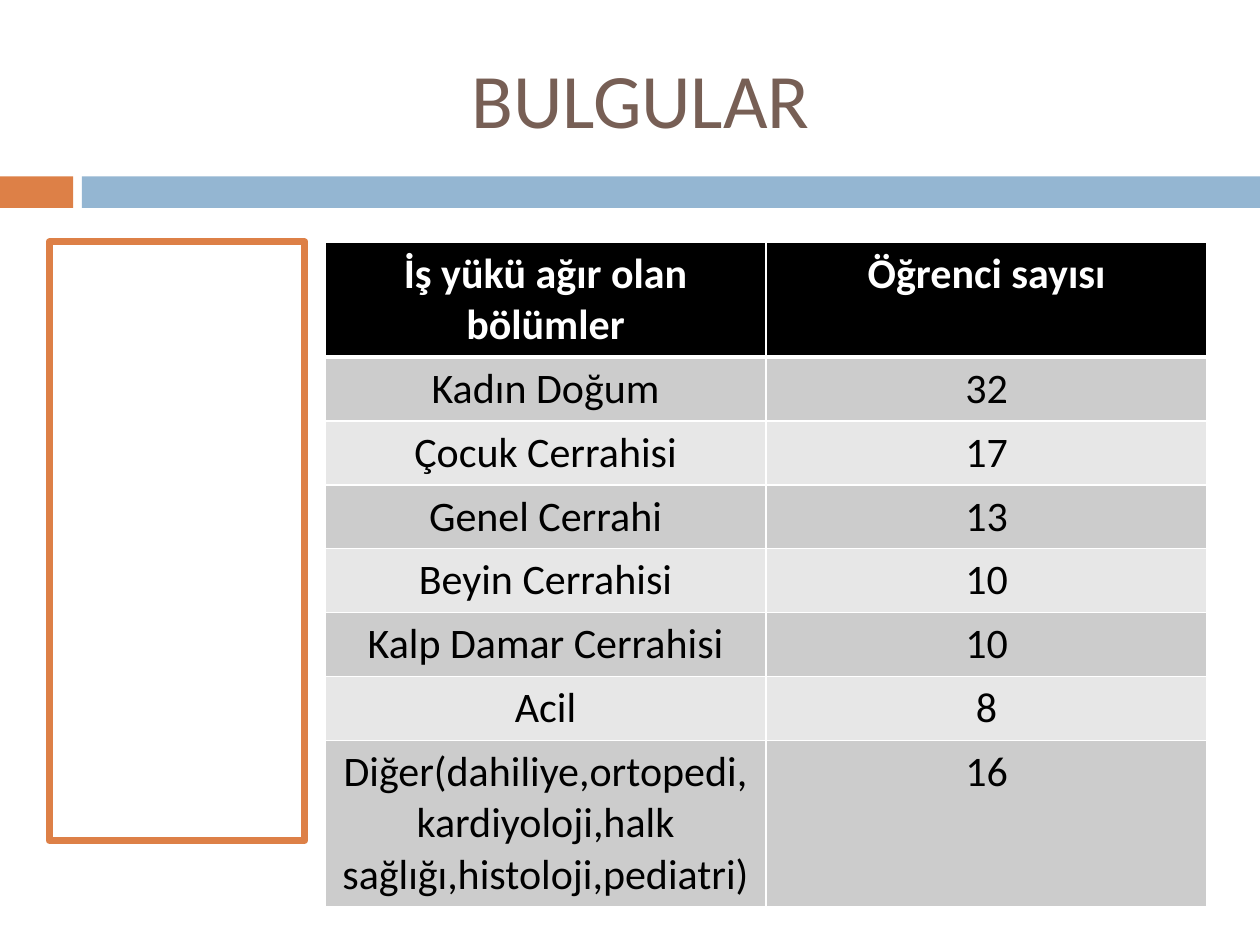
"""Build the findings slide with a table of the departments with a heavy workload."""
from lxml.etree import SubElement
from pptx import Presentation
from pptx.dml.color import RGBColor
from pptx.enum.shapes import MSO_SHAPE as Shape
from pptx.enum.text import MSO_ANCHOR as Anchor, PP_ALIGN as Align
from pptx.oxml.ns import qn
from pptx.util import Inches, Pt

COLORS = {
    "orange": "DD8047", "blue": "94B6D2", "brown": "775F55", "white": "FFFFFF",
    "black": "000000", "dark_band": "CCCCCC", "light_band": "E7E7E7",
}
ROWS = [
    ("İş yükü ağır olan bölümler", "Öğrenci sayısı"),
    ("Kadın Doğum", "32"),
    ("Çocuk Cerrahisi", "17"),
    ("Genel Cerrahi", "13"),
    ("Beyin Cerrahisi", "10"),
    ("Kalp Damar Cerrahisi", "10"),
    ("Acil", "8"),
    ("Diğer(dahiliye,ortopedi,kardiyoloji,halk sağlığı,histoloji,pediatri)", "16"),
]


def write(frame, text, color, **font_values):
    para = frame.paragraphs[0]
    para.alignment = Align.CENTER
    span = para.add_run()
    span.text = text
    span.font.color.rgb = RGBColor.from_string(COLORS[color])
    for name, value in {"name": "Calibri", **font_values}.items():
        setattr(span.font, name, value)


def add_border(cell, side, width):
    line = SubElement(cell._tc.get_or_add_tcPr(), qn(f"a:ln{side}"), w=str(Pt(width)))
    fill = SubElement(line, qn("a:solidFill"))
    SubElement(fill, qn("a:srgbClr"), val=COLORS["white"])


deck = Presentation()
deck.slide_width, deck.slide_height = Inches(10), Inches(7.5)
page = deck.slides.add_slide(deck.slide_layouts[5])

for left, width, color in [(0, 0.58, "orange"), (0.65, 9.35, "blue")]:
    bar = page.shapes.add_shape(
        Shape.RECTANGLE, Inches(left), Inches(1.4), Inches(width), Inches(0.25))
    bar.shadow.inherit = False
    bar.fill.solid()
    bar.fill.fore_color.rgb = RGBColor.from_string(COLORS[color])
    bar.line.fill.background()

title = page.shapes.title
title.left, title.top = Inches(0.67), Inches(0.3)
title.width, title.height = Inches(8.83), Inches(0.95)
title.text_frame.vertical_anchor = Anchor.MIDDLE
write(title.text_frame, "BULGULAR", "brown", size=Pt(44))

side_frame = page.shapes.add_shape(
    Shape.RECTANGLE, Inches(0.39), Inches(1.92), Inches(2.03), Inches(4.75))
side_frame.shadow.inherit = False
side_frame.fill.background()
side_frame.line.color.rgb = RGBColor.from_string(COLORS["orange"])
side_frame.line.width = Pt(4)

table_box = page.shapes.add_table(
    len(ROWS), 2, Inches(2.58), Inches(1.92), Inches(7), Inches(5.2))
table = table_box.table
for row_index, values in enumerate(ROWS):
    table.rows[row_index].height = Inches(0.41)
    is_header = row_index == 0
    band = "black" if is_header else "dark_band" if row_index % 2 else "light_band"
    borders = {"L": 1, "R": 1, "T": 3 if row_index == 1 else 1, "B": 3 if is_header else 1}
    for column_index, value in enumerate(values):
        cell = table.cell(row_index, column_index)
        for side, width in borders.items():
            add_border(cell, side, width)
        cell.fill.solid()
        cell.fill.fore_color.rgb = RGBColor.from_string(COLORS[band])
        write(cell.text_frame, value, "white" if is_header else "black",
              size=Pt(24), bold=is_header)
table_box.height = Inches(5.2)

deck.save("out.pptx")
